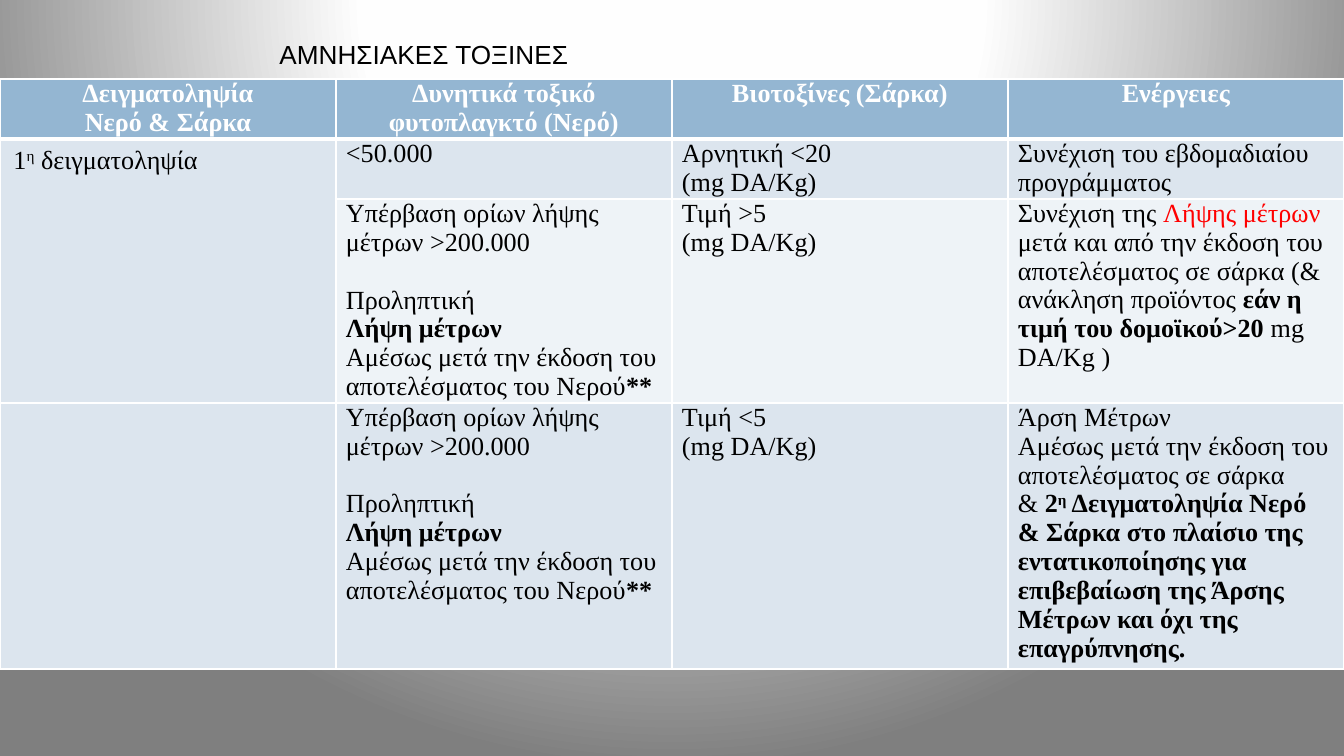
from lxml.etree import SubElement
from pptx import Presentation
from pptx.dml.color import RGBColor
from pptx.enum.text import MSO_ANCHOR, PP_ALIGN
from pptx.oxml import parse_xml
from pptx.oxml.ns import nsdecls, qn
from pptx.util import Pt

PX = 6804
COLORS = {
    "white": "FFFFFF",
    "near_white": "FEFEFE",
    "gray": "7F7F7F",
    "header": "94B6D2",
    "band": "DCE5EE",
    "light": "EEF3F7",
    "text": "000000",
    "red": "FF0000",
}
L, C, J = PP_ALIGN.LEFT, PP_ALIGN.CENTER, PP_ALIGN.JUSTIFY
LINE_GAP = 15.5

HEADERS = [
    ["Δειγματοληψία", "Νερό & Σάρκα"],
    ["Δυνητικά τοξικό φυτοπλαγκτό (Νερό)"],
    ["Βιοτοξίνες (Σάρκα)"],
    ["Ενέργειες"],
]
UNIT = (J, [("(mg DA/Kg)", "")])
EXCEEDED = [
    (L, [("Υπέρβαση ορίων λήψης μέτρων >200.000", "")]),
    (J, [("Προληπτική", "gap")]),
    (J, [("Λήψη μέτρων", "bold")]),
    (L, [("Αμέσως μετά την έκδοση του αποτελέσματος του Νερού", ""), ("**", "bold")]),
]
ROWS = [
    [[(C, [(line, "bold white") for line in [text]]) for text in lines] for lines in HEADERS],
    [
        [(L, [("1", ""), ("η", "super"), (" δειγματοληψία", "")])],
        [(J, [("<50.000", "")])],
        [(J, [("Αρνητική <20", "")]), UNIT],
        [(L, [("Συνέχιση του εβδομαδιαίου προγράμματος", "")])],
    ],
    [
        [],
        EXCEEDED,
        [(J, [("Τιμή >5", "")]), UNIT],
        [(L, [
            ("Συνέχιση της ", ""),
            ("Λήψης μέτρων ", "red"),
            ("μετά και από την έκδοση του αποτελέσματος σε σάρκα (& ανάκληση προϊόντος ", ""),
            ("εάν η τιμή του δομοϊκού>20 ", "bold"),
            ("mg DA/Kg )", ""),
        ])],
    ],
    [
        [],
        EXCEEDED,
        [(J, [("Τιμή <5", "")]), UNIT],
        [
            (J, [("Άρση Μέτρων", "")]),
            (L, [("Αμέσως μετά την έκδοση του αποτελέσματος σε σάρκα", "")]),
            (L, [
                ("& ", ""),
                ("2", "bold"),
                ("η", "bold super"),
                (" Δειγματοληψία Νερό & Σάρκα στο πλαίσιο της εντατικοποίησης για "
                 "επιβεβαίωση της Άρσης Μέτρων και όχι της επαγρύπνησης.", "bold"),
            ]),
        ],
    ],
]
ROW_HEIGHTS = [60, 60, 204, 266]
ROW_FILLS = ["header", "band", "light", "band"]


def rgb(name):
    return RGBColor.from_string(COLORS[name])


def set_background(s):
    stops = [(0, "white"), (40, "near_white"), (100, "gray")]
    gs = "".join(
        f'<a:gs pos="{pos * 1000}"><a:srgbClr val="{COLORS[name]}"/></a:gs>'
        for pos, name in stops
    )
    bg = parse_xml(
        f'<p:bg {nsdecls("p", "a")}><p:bgPr><a:gradFill rotWithShape="1">'
        f'<a:gsLst>{gs}</a:gsLst><a:path path="circle">'
        '<a:fillToRect l="50000" t="-80000" r="50000" b="180000"/></a:path>'
        '</a:gradFill><a:effectLst/></p:bgPr></p:bg>'
    )
    s.element.cSld.insert(0, bg)


def add_run(p, text, font, color, bold=False):
    r = p.add_run()
    r.text = text
    r.font.name = font
    r.font.size = Pt(14)
    r.font.bold = bold
    r.font.color.rgb = rgb(color)
    return r


def add_title(s, x, y, w, h):
    sp = s.shapes.title
    sp.left, sp.top, sp.width, sp.height = (v * PX for v in (x, y, w, h))
    tf = sp.text_frame
    tf.word_wrap = True
    tf.vertical_anchor = MSO_ANCHOR.TOP
    p = tf.paragraphs[0]
    p.alignment = L
    add_run(p, "ΑΜΝΗΣΙΑΚΕΣ ΤΟΞΙΝΕΣ", "Arial", "text")


def fill_text(tf, paragraphs):
    for i, (align, runs) in enumerate(paragraphs):
        p = tf.add_paragraph() if i else tf.paragraphs[0]
        p.alignment = align
        for text, style in runs:
            flags = style.split()
            color = next((f for f in flags if f in COLORS), "text")
            r = add_run(p, text, "Times New Roman", color, "bold" in flags)
            if "super" in flags:
                r.font._element.set("baseline", "30000")
            if "gap" in flags:
                p.space_before = Pt(LINE_GAP)


def set_borders(cell, bottom):
    tcPr = cell._tc.get_or_add_tcPr()
    sides = [("lnL", 1), ("lnR", 1), ("lnT", 1), ("lnB", bottom)]
    for i, (side, width) in enumerate(sides):
        ln = SubElement(tcPr, qn(f"a:{side}"), w=str(Pt(width)))
        fill = SubElement(ln, qn("a:solidFill"))
        SubElement(fill, qn("a:srgbClr"), val=COLORS["white"])
        tcPr.insert(i, ln)


def add_toxin_table(s, x, y, w):
    frame = s.shapes.add_table(
        len(ROWS), len(HEADERS), x * PX, y * PX, w * PX, sum(ROW_HEIGHTS) * PX
    )
    table = frame.table
    for col in table.columns:
        col.width = w // len(HEADERS) * PX
    for i, (height, fill) in enumerate(zip(ROW_HEIGHTS, ROW_FILLS)):
        table.rows[i].height = height * PX
        for j, paragraphs in enumerate(ROWS[i]):
            cell = table.cell(i, j)
            if i == 0 or j > 0:
                cell.margin_left = cell.margin_right = 10 * PX
                cell.margin_top = cell.margin_bottom = 0
            cell.fill.solid()
            cell.fill.fore_color.rgb = rgb(fill)
            set_borders(cell, 1 if i else 3)
            fill_text(cell.text_frame, paragraphs)
    table.cell(1, 0).merge(table.cell(2, 0))


def main():
    prs = Presentation()
    prs.slide_width, prs.slide_height = 1344 * PX, 756 * PX
    s = prs.slides.add_slide(prs.slide_layouts[5])
    set_background(s)
    add_toxin_table(s, 0, 79, 1344)
    add_title(s, 266, 32, 458, 46)
    prs.save("out.pptx")


if __name__ == "__main__":
    main()
